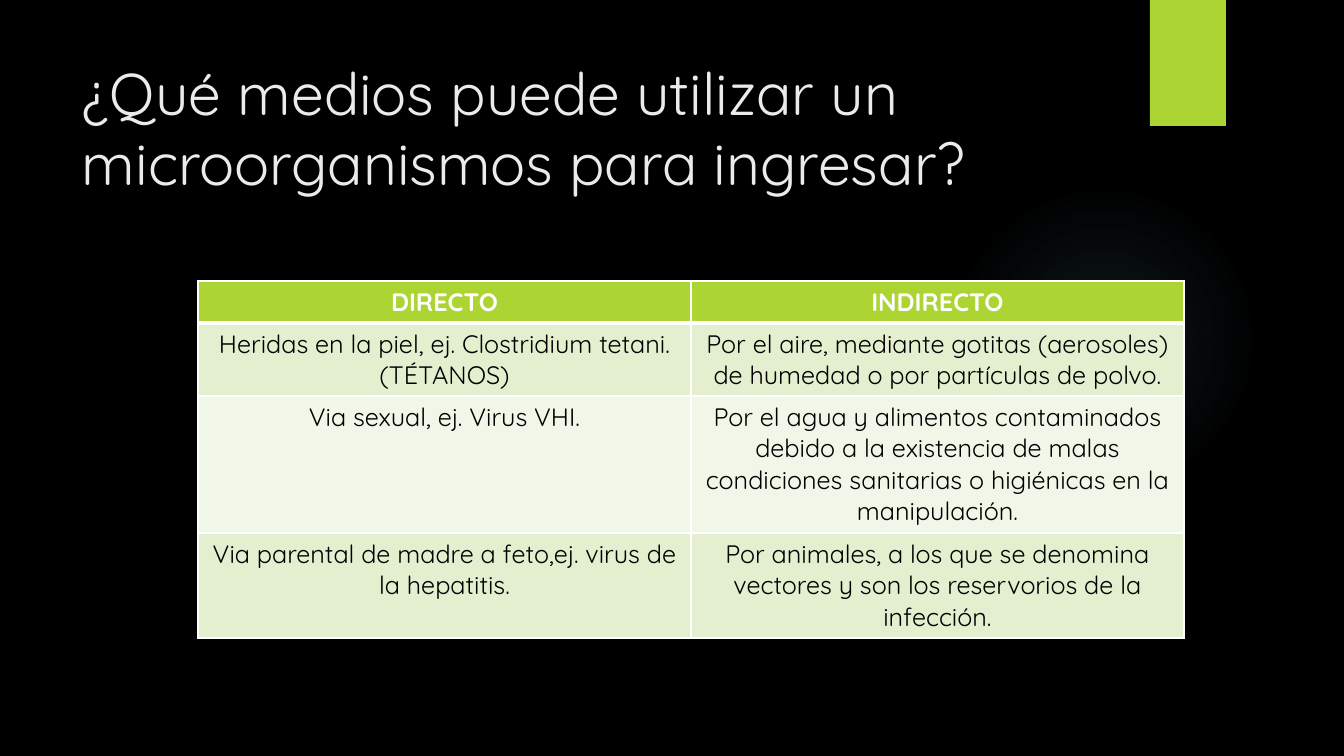
from dataclasses import dataclass

from lxml.etree import SubElement
from pptx import Presentation
from pptx.dml.color import RGBColor
from pptx.enum.shapes import MSO_SHAPE
from pptx.enum.text import MSO_ANCHOR, PP_ALIGN
from pptx.oxml import parse_xml
from pptx.oxml.ns import nsdecls, qn
from pptx.util import Emu, Pt

EMU_PER_INCH = 914400
PX_PER_INCH = 100.8


@dataclass(frozen=True)
class Theme:
    font: str = "Quicksand"
    background: str = "000000"
    accent: str = "ACD433"
    glow: str = "7AC4F0"
    title: str = "EBEBEB"
    header_text: str = "FFFFFF"
    body_text: str = "000000"
    border: str = "FFFFFF"
    bands: tuple[str, str] = ("E3EFCE", "F1F7E8")
    title_size: int = 42
    table_size: int = 18
    border_width: int = 1
    header_rule: int = 3


@dataclass(frozen=True)
class Box:
    left: int
    top: int
    width: int
    height: int


@dataclass(frozen=True)
class Route:
    direct: str
    indirect: str
    height: int


THEME = Theme()
TITLE = "¿Qué medios puede utilizar un microorganismos para ingresar?"
TITLE_BOX = Box(72, 50, 1037, 154)
GLOW_BOX = Box(949, 184, 310, 310)
RIBBON_BOX = Box(1150, 0, 76, 126)
TABLE_BOX = Box(198, 281, 986, 357)
GLOW_STOPS = ((0, 7), (36, 6), (69, 0))
ROUTES = (
    Route("DIRECTO", "INDIRECTO", 42),
    Route(
        "Heridas en la piel, ej. Clostridium tetani. (TÉTANOS)",
        "Por el aire, mediante gotitas (aerosoles) de humedad o por partículas de polvo.",
        73,
    ),
    Route(
        "Via sexual, ej. Virus VHI.",
        "Por el agua y alimentos contaminados debido a la existencia de malas "
        "condiciones sanitarias o higiénicas en la manipulación.",
        137,
    ),
    Route(
        "Via parental de madre a feto,ej. virus de la hepatitis.",
        "Por animales, a los que se denomina vectores y son los reservorios de la infección.",
        105,
    ),
)


def px(length: int) -> Emu:
    return Emu(round(length * EMU_PER_INCH / PX_PER_INCH))


def place(box: Box) -> tuple[Emu, Emu, Emu, Emu]:
    return px(box.left), px(box.top), px(box.width), px(box.height)


def style_text(paragraph, size: int, color: str, bold: bool = False) -> None:
    paragraph.font.name = THEME.font
    paragraph.font.size = Pt(size)
    paragraph.font.bold = bold
    paragraph.font.color.rgb = RGBColor.from_string(color)


def add_plain_shape(slide, kind: MSO_SHAPE, box: Box, color: str):
    shape = slide.shapes.add_shape(kind, *place(box))
    shape.shadow.inherit = False
    shape.line.fill.background()
    shape.fill.solid()
    shape.fill.fore_color.rgb = RGBColor.from_string(color)
    return shape


def add_glow(slide) -> None:
    glow = add_plain_shape(slide, MSO_SHAPE.OVAL, GLOW_BOX, THEME.glow)
    stops = "".join(
        f'<a:gs pos="{position * 1000}"><a:srgbClr val="{THEME.glow}">'
        f'<a:alpha val="{opacity * 1000}"/></a:srgbClr></a:gs>'
        for position, opacity in GLOW_STOPS
    )
    gradient = parse_xml(
        f'<a:gradFill {nsdecls("a")}><a:gsLst>{stops}</a:gsLst><a:path path="circle">'
        '<a:fillToRect l="50000" t="50000" r="50000" b="50000"/></a:path></a:gradFill>'
    )
    properties = glow.element.spPr
    properties.replace(properties.find(qn("a:solidFill")), gradient)


def add_title(slide) -> None:
    frame = slide.shapes.add_textbox(*place(TITLE_BOX)).text_frame
    frame.word_wrap = True
    frame.vertical_anchor = MSO_ANCHOR.MIDDLE
    frame.text = TITLE
    style_text(frame.paragraphs[0], THEME.title_size, THEME.title)


def set_borders(cell, top: int, bottom: int) -> None:
    properties = cell._tc.get_or_add_tcPr()
    side = THEME.border_width
    widths = {"lnL": side, "lnR": side, "lnT": top, "lnB": bottom}
    for index, (edge, width) in enumerate(widths.items()):
        line = SubElement(properties, qn(f"a:{edge}"), w=str(Pt(width)))
        SubElement(SubElement(line, qn("a:solidFill")), qn("a:srgbClr"), val=THEME.border)
        properties.insert(index, line)


def fill_cell(cell, text: str, row: int) -> None:
    is_header = row == 0
    cell.text = text
    paragraph = cell.text_frame.paragraphs[0]
    paragraph.alignment = PP_ALIGN.CENTER
    color = THEME.header_text if is_header else THEME.body_text
    style_text(paragraph, THEME.table_size, color, is_header)
    background = THEME.accent if is_header else THEME.bands[(row - 1) % 2]
    cell.fill.solid()
    cell.fill.fore_color.rgb = RGBColor.from_string(background)
    set_borders(
        cell,
        top=THEME.header_rule if row == 1 else THEME.border_width,
        bottom=THEME.header_rule if is_header else THEME.border_width,
    )


def add_routes(slide) -> None:
    table = slide.shapes.add_table(len(ROUTES), 2, *place(TABLE_BOX)).table
    for column in table.columns:
        column.width = px(TABLE_BOX.width // 2)
    for row, route in enumerate(ROUTES):
        table.rows[row].height = px(route.height)
        for column, text in enumerate((route.direct, route.indirect)):
            fill_cell(table.cell(row, column), text, row)


def main() -> None:
    presentation = Presentation()
    presentation.slide_width, presentation.slide_height = px(1344), px(756)
    slide = presentation.slides.add_slide(presentation.slide_layouts[6])
    slide.background.fill.solid()
    slide.background.fill.fore_color.rgb = RGBColor.from_string(THEME.background)
    add_glow(slide)
    add_plain_shape(slide, MSO_SHAPE.RECTANGLE, RIBBON_BOX, THEME.accent)
    add_title(slide)
    add_routes(slide)
    presentation.save("out.pptx")


if __name__ == "__main__":
    main()
